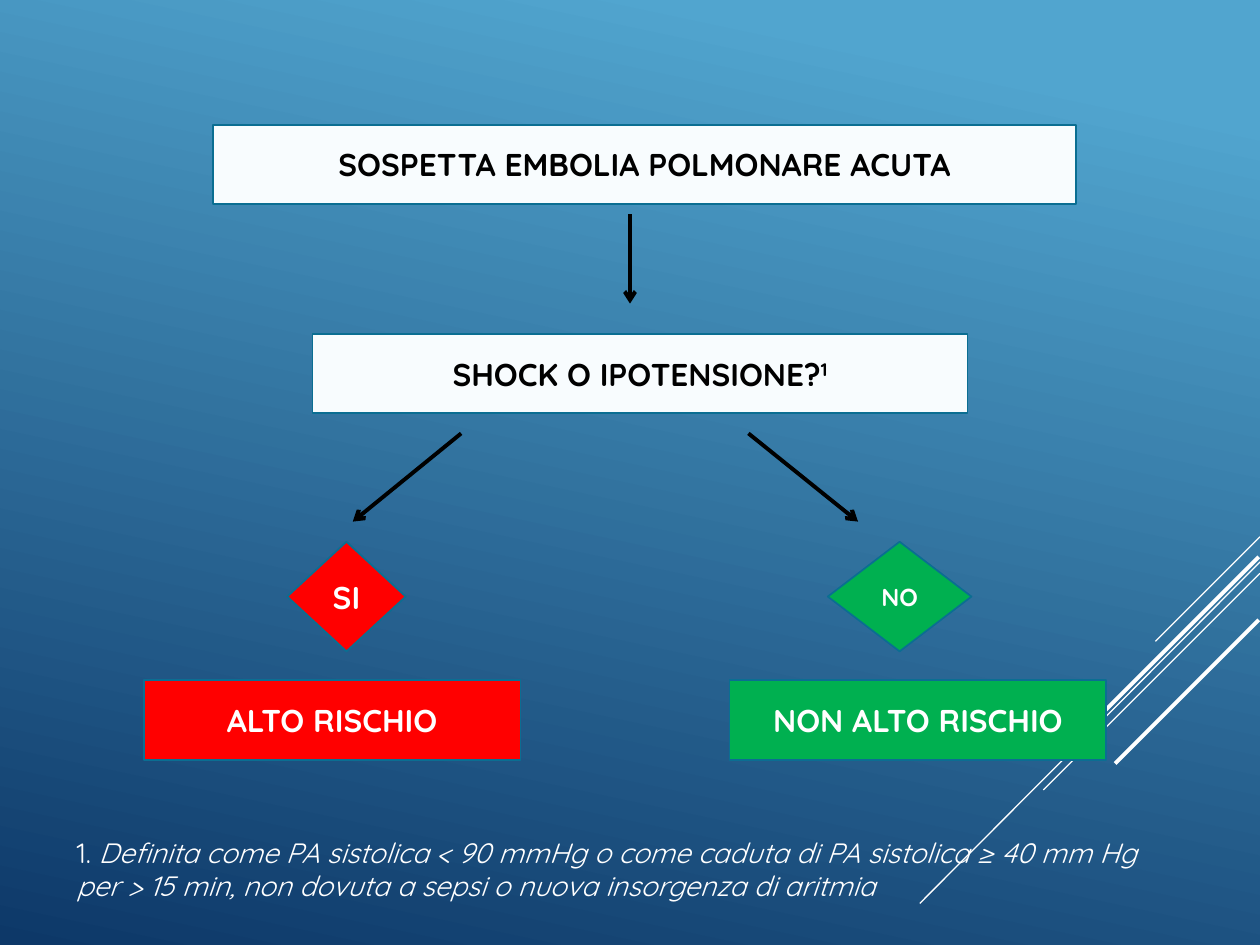
from typing import NamedTuple

from lxml.etree import SubElement
from pptx import Presentation
from pptx.dml.color import RGBColor
from pptx.enum.shapes import MSO_CONNECTOR, MSO_SHAPE
from pptx.enum.text import MSO_ANCHOR, PP_ALIGN
from pptx.oxml.ns import qn
from pptx.util import Inches, Pt

FONT = "Quicksand"
WHITE, BLACK, PALE = "FFFFFF", "000000", "F8FCFE"
RED, GREEN, BORDER = "FF0000", "00B050", "0B6E92"


class Node(NamedTuple):
    text: str
    left: float
    top: float
    width: float
    height: float = 0.63
    fill: str = PALE
    color: str = BLACK
    size: int = 18
    kind: MSO_SHAPE = MSO_SHAPE.RECTANGLE
    note: str = ""


class Line(NamedTuple):
    x1: float
    y1: float
    x2: float
    y2: float
    color: str = WHITE
    width: float = 0.75
    arrow: bool = False


STRIPES = [
    Line(10, 4.26, 9.17, 5.09),
    Line(10, 4.46, 7.3, 7.17),
    Line(10, 4.55, 8.28, 6.27),
    Line(9.99, 4.42, 8.42, 5.99, width=2.25),
    Line(9.99, 4.92, 8.85, 6.06, width=2.25),
]
NODES = [
    Node("SOSPETTA EMBOLIA POLMONARE ACUTA", 1.69, 0.99, 6.85),
    Node("SHOCK O IPOTENSIONE?", 2.48, 2.65, 5.2, note="1"),
    Node("SI", 2.28, 4.3, 0.94, 0.87, RED, WHITE, kind=MSO_SHAPE.DIAMOND),
    Node("ALTO RISCHIO", 1.14, 5.4, 2.99, fill=RED, color=WHITE),
    Node("NO", 6.57, 4.3, 1.14, 0.87, GREEN, WHITE, 14, MSO_SHAPE.DIAMOND),
    Node("NON ALTO RISCHIO", 5.79, 5.4, 2.99, fill=GREEN, color=WHITE),
]
ARROWS = [
    Line(5, 1.7, 5, 2.41, BLACK, 2.25, True),
    Line(3.66, 3.44, 2.8, 4.14, BLACK, 2.25, True),
    Line(5.94, 3.44, 6.81, 4.14, BLACK, 2.25, True),
]


def rgb(value: str) -> RGBColor:
    return RGBColor.from_string(value)


def style_run(r, size: int, color: str, bold: bool = False, italic: bool = False) -> None:
    r.font.name = FONT
    r.font.size = Pt(size)
    r.font.color.rgb = rgb(color)
    r.font.bold = bold
    r.font.italic = italic


def draw_line(s, line: Line) -> None:
    ends = [Inches(v) for v in line[:4]]
    sp = s.shapes.add_connector(MSO_CONNECTOR.STRAIGHT, *ends)
    sp.line.color.rgb = rgb(line.color)
    sp.line.width = Pt(line.width)
    if line.arrow:
        SubElement(sp.line._get_or_add_ln(), qn("a:tailEnd"), type="arrow")
    SubElement(sp._element.spPr, qn("a:effectLst"))


def draw_node(s, node: Node) -> None:
    box = [Inches(v) for v in node[1:5]]
    sp = s.shapes.add_shape(node.kind, *box)
    sp.shadow.inherit = False
    sp.fill.solid()
    sp.fill.fore_color.rgb = rgb(node.fill)
    sp.line.color.rgb = rgb(BORDER)
    sp.line.width = Pt(1)
    tf = sp.text_frame
    tf.text = node.text
    tf.word_wrap = node.kind == MSO_SHAPE.RECTANGLE
    tf.vertical_anchor = MSO_ANCHOR.MIDDLE
    p = tf.paragraphs[0]
    p.alignment = PP_ALIGN.CENTER
    if node.note:
        r = p.add_run()
        r.text = node.note
        r.font._element.set("baseline", "30000")
    for r in p.runs:
        style_run(r, node.size, node.color, bold=True)


def draw_footnote(s) -> None:
    sp = s.shapes.add_textbox(Inches(0.51), Inches(6.58), Inches(9.26), Inches(0.64))
    tf = sp.text_frame
    tf.word_wrap = True
    tf.text = "1. \nper > 15 min, non dovuta a sepsi o nuova insorgenza di aritmia"
    first, second = tf.paragraphs
    r = first.add_run()
    r.text = "Definita come PA sistolica < 90 mmHg o come caduta di PA sistolica ≥ 40 mm Hg"
    style_run(first.runs[0], 16, WHITE)
    for r in (first.runs[1], second.runs[0]):
        style_run(r, 16, WHITE, italic=True)


def main() -> None:
    prs = Presentation()
    prs.slide_width, prs.slide_height = Inches(10), Inches(7.5)
    s = prs.slides.add_slide(prs.slide_layouts[6])

    # Background gradient
    fill = s.background.fill
    fill.gradient()
    fill.gradient_angle = 258
    stops = [(0.1, "51A5CF"), (1.0, "0D3868")]
    for stop, (position, color) in zip(fill.gradient_stops, stops):
        stop.position = position
        stop.color.rgb = rgb(color)

    # Decorative stripes, then the flowchart
    for line in STRIPES:
        draw_line(s, line)
    for node in NODES:
        draw_node(s, node)
    for line in ARROWS:
        draw_line(s, line)

    # Footnote
    draw_footnote(s)
    prs.save("out.pptx")


if __name__ == "__main__":
    main()
